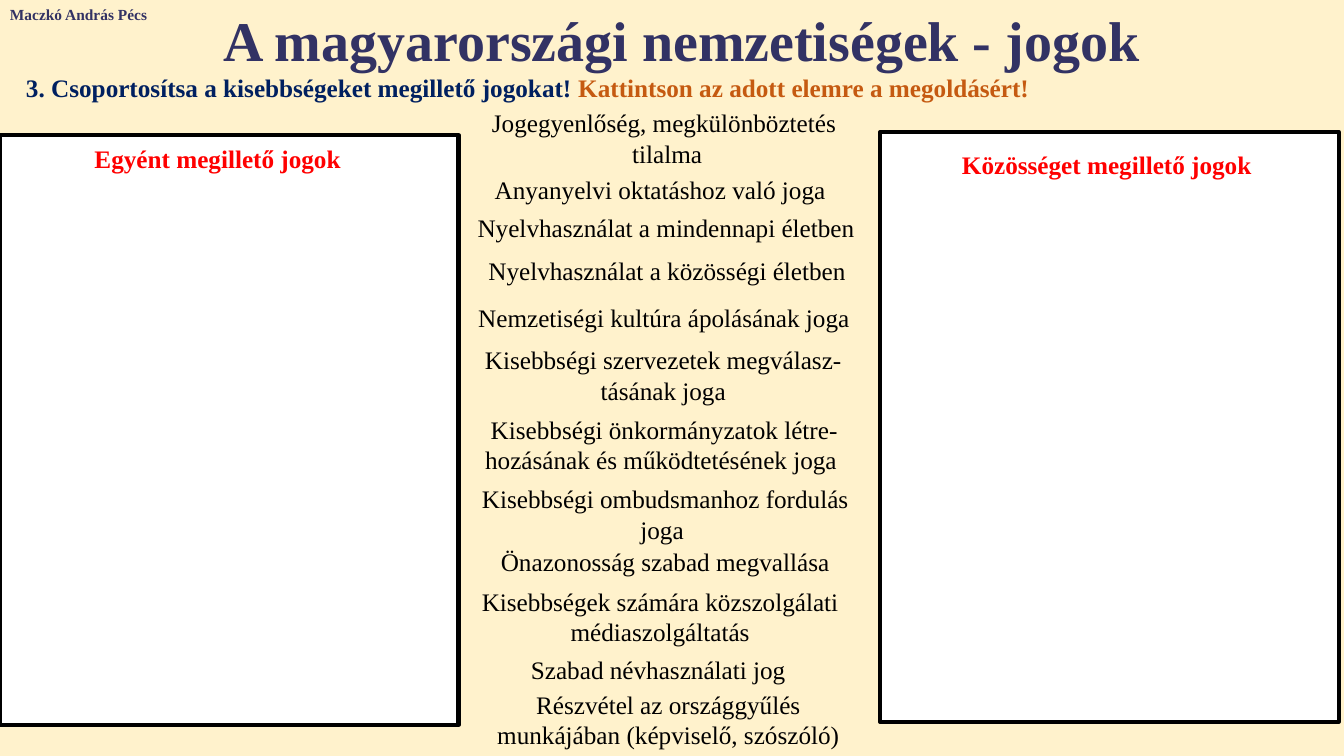
import pptx
import pptx.util
import pptx.dml.color
import pptx.enum.shapes
import pptx.enum.text

Pt = pptx.util.Pt
ALIGN = pptx.enum.text.PP_ALIGN
COLORS = {
    "background": "FFF2CC",
    "title": "323264",
    "task": "002060",
    "hint": "C55A11",
    "heading": "FF0000",
    "text": "000000",
    "panel": "FFFFFF",
    "border": "000000",
}
FONT = "Times New Roman"
ITEM_WIDTH = 295.2
LINE_HEIGHT = 29
TWO_LINES = 51
RIGHTS = [
    (329, 73.4, ["Jogegyenlőség, megkülönböztetés ", "tilalma"], TWO_LINES),
    (326.2, 121, ["Anyanyelvi oktatáshoz való joga "], LINE_HEIGHT),
    (330.5, 148.3, ["Nyelvhasználat a mindennapi életben "], LINE_HEIGHT),
    (331.2, 178.6, ["Nyelvhasználat a közösségi életben "], LINE_HEIGHT),
    (329, 212.4, ["Nemzetiségi kultúra ápolásának joga "], LINE_HEIGHT),
    (326.2, 242.6, ["Kisebbségi szervezetek megválasz-tásának joga"], TWO_LINES),
    (326.9, 292.3, ["Kisebbségi önkormányzatok létre-hozásának és működtetésének joga "], TWO_LINES),
    (327.6, 342, ["Kisebbségi ombudsmanhoz fordulás joga "], TWO_LINES),
    (327.6, 386.6, ["Önazonosság szabad megvallása"], LINE_HEIGHT),
    (324, 415.4, ["Kisebbségek számára közszolgálati médiaszolgáltatás"], TWO_LINES),
    (322.6, 463.7, ["Szabad névhasználati jog"], LINE_HEIGHT),
    (329.8, 488.9, ["Részvétel az országgyűlés munkájában (képviselő, szószóló)"], TWO_LINES),
]


def rgb(name):
    return pptx.dml.color.RGBColor.from_string(COLORS[name])


def add_run(p, text, size=18, color="text", bold=False):
    r = p.add_run()
    r.text = text
    r.font.name = FONT
    r.font.size = Pt(size)
    r.font.bold = bold
    r.font.color.rgb = rgb(color)


def setup_frame(tf):
    tf.word_wrap = True
    tf.auto_size = pptx.enum.text.MSO_AUTO_SIZE.NONE
    tf.vertical_anchor = pptx.enum.text.MSO_ANCHOR.TOP


def add_text(s, x, y, w, h, lines, align=ALIGN.CENTER, **style):
    tf = s.shapes.add_textbox(Pt(x), Pt(y), Pt(w), Pt(h)).text_frame
    setup_frame(tf)
    for i, line in enumerate(lines):
        p = tf.add_paragraph() if i else tf.paragraphs[0]
        p.alignment = align
        add_run(p, line, **style)
    return tf


def set_title(s, text, x, y, w, h):
    sp = s.shapes.title
    sp.left, sp.top, sp.width, sp.height = Pt(x), Pt(y), Pt(w), Pt(h)
    setup_frame(sp.text_frame)
    p = sp.text_frame.paragraphs[0]
    p.alignment = ALIGN.CENTER
    add_run(p, text, size=40, color="title", bold=True)


def add_panel(s, x, y):
    sp = s.shapes.add_shape(
        pptx.enum.shapes.MSO_SHAPE.RECTANGLE, Pt(x), Pt(y), Pt(327.6), Pt(421.2))
    sp.shadow.inherit = False
    sp.fill.solid()
    sp.fill.fore_color.rgb = rgb("panel")
    sp.line.color.rgb = rgb("border")
    sp.line.width = Pt(3)


def main():
    prs = pptx.Presentation()
    prs.slide_width, prs.slide_height = Pt(960), Pt(540)
    s = prs.slides.add_slide(prs.slide_layouts[5])
    s.background.fill.solid()
    s.background.fill.fore_color.rgb = rgb("background")

    add_text(s, 0, 0, 114.5, 21, ["Maczkó András Pécs"],
             align=ALIGN.LEFT, size=11, color="title", bold=True)
    set_title(s, "A magyarországi nemzetiségek - jogok", 110.2, 0, 753.1, 55.4)
    tf = add_text(s, 11.5, 48.2, 741.6, LINE_HEIGHT,
                  ["3. Csoportosítsa a kisebbségeket megillető jogokat! "],
                  align=ALIGN.LEFT, color="task", bold=True)
    add_run(tf.paragraphs[0], "Kattintson az adott elemre a megoldásért!",
            color="hint", bold=True)

    add_panel(s, 0, 96.5)
    add_panel(s, 628.6, 94.3)
    for x, y, heading in [(7.9, 98.6, "Egyént megillető jogok"),
                          (643, 103, "Közösséget megillető jogok")]:
        add_text(s, x, y, ITEM_WIDTH, LINE_HEIGHT, [heading],
                 color="heading", bold=True)
    for x, y, lines, height in RIGHTS:
        add_text(s, x, y, ITEM_WIDTH, height, lines)

    prs.save("out.pptx")


if __name__ == "__main__":
    main()
